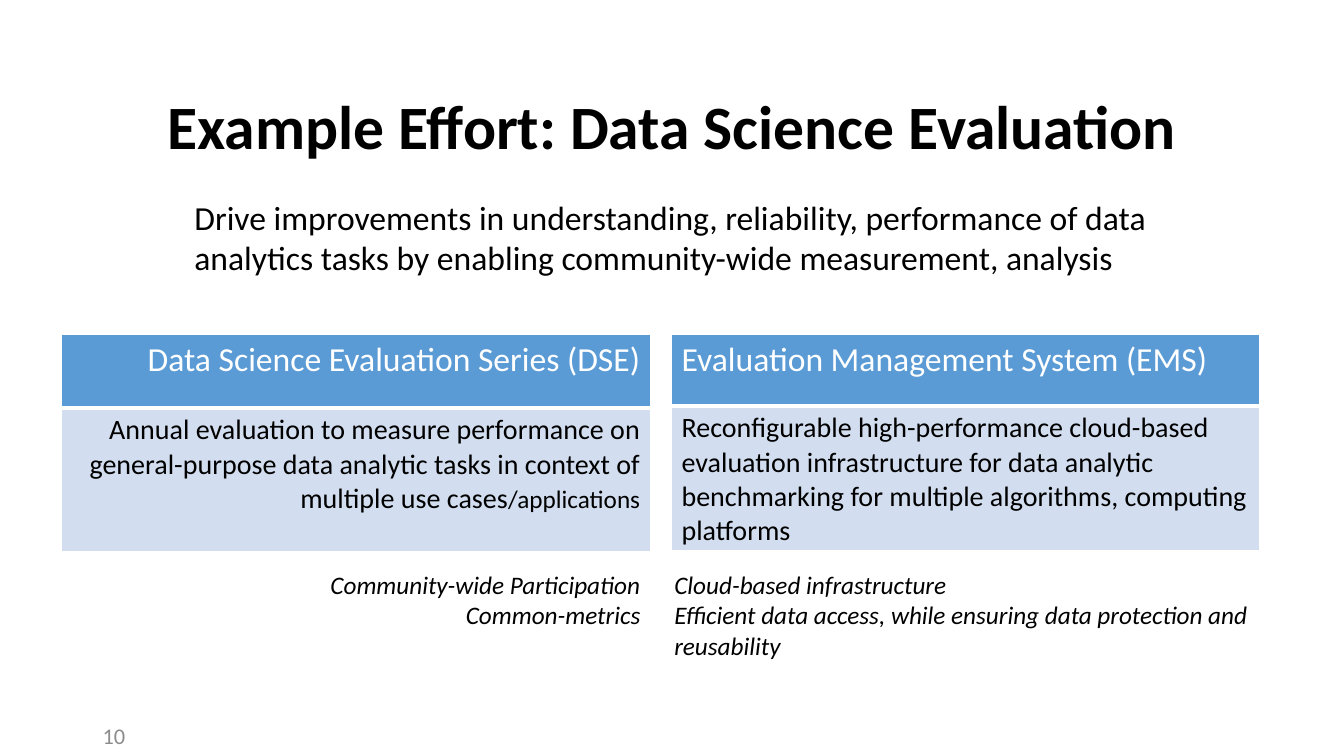
from lxml import etree
from pptx import Presentation
from pptx.dml.color import RGBColor
from pptx.enum.text import MSO_ANCHOR, PP_ALIGN
from pptx.oxml.ns import qn
from pptx.util import Inches, Pt

FONT = "Calibri"
COLORS = {
    "text": "000000",
    "number": "8C8C8C",
    "white": "FFFFFF",
    "header": "5B9BD5",
    "body": "D2DEEF",
}


def write_paragraphs(frame, paragraphs, color="text", align=PP_ALIGN.LEFT,
                     bold=False, italic=False, line_spacing=None):
    """Fill a frame; each paragraph is a list of (text, size) runs."""
    frame.word_wrap = True
    for index, runs in enumerate(paragraphs):
        paragraph = frame.add_paragraph() if index else frame.paragraphs[0]
        paragraph.alignment = align
        if line_spacing:
            paragraph.line_spacing = line_spacing
        for text, size in runs:
            run = paragraph.add_run()
            run.text = text
            run.font.name = FONT
            run.font.size = Pt(size)
            run.font.bold = bold
            run.font.italic = italic
            run.font.color.rgb = RGBColor.from_string(COLORS[color])


def add_text(slide, box, paragraphs, anchor=MSO_ANCHOR.TOP, **style):
    text_box = slide.shapes.add_textbox(*map(Inches, box))
    text_box.text_frame.vertical_anchor = anchor
    write_paragraphs(text_box.text_frame, paragraphs, **style)


def style_cell(cell, fill, bottom_width):
    """Set the cell fill and its white borders."""
    properties = cell._tc.get_or_add_tcPr()
    for side, width in (("L", 1), ("R", 1), ("T", 1), ("B", bottom_width)):
        line = etree.SubElement(properties, qn(f"a:ln{side}"), w=str(Pt(width)))
        solid = etree.SubElement(line, qn("a:solidFill"))
        etree.SubElement(solid, qn("a:srgbClr"), val=COLORS["white"])
    cell.fill.solid()
    cell.fill.fore_color.rgb = RGBColor.from_string(COLORS[fill])


def add_card(slide, box, row_heights, heading, description, align):
    """Place a one-column table with a heading above a description."""
    left, top, width = box
    table = slide.shapes.add_table(
        2, 1, Inches(left), Inches(top), Inches(width), Inches(sum(row_heights))
    ).table
    for row, height in zip(table.rows, row_heights):
        row.height = Inches(height)
    header, body = table.cell(0, 0), table.cell(1, 0)
    style_cell(header, "header", 3)
    style_cell(body, "body", 1)
    write_paragraphs(header.text_frame, [[(heading, 24)]], "white", align)
    write_paragraphs(body.text_frame, [description], align=align)


def add_introduction(slide):
    add_text(slide, (0.92, 0.56, 11.5, 1.45),
             [[("Example Effort: Data Science Evaluation", 44)]],
             anchor=MSO_ANCHOR.MIDDLE, align=PP_ALIGN.CENTER,
             bold=True, line_spacing=0.9)
    add_text(slide, (1.83, 1.9, 9.66, 0.91),
             [[("Drive improvements in understanding, reliability, performance of data "
                "analytics tasks by enabling community-wide measurement, analysis", 24)]])


def add_series(slide, left, top):
    add_card(slide, (left, top, 5.84), (0.73, 1.42),
             "Data Science Evaluation Series (DSE)",
             [("Annual evaluation to measure performance on general-purpose data "
               "analytic tasks in context of multiple use cases", 20),
              ("/applications", 18)],
             PP_ALIGN.RIGHT)
    add_text(slide, (left + 1.42, top + 2.28, 4.42, 0.71),
             [[("Community-wide Participation", 18)], [("Common-metrics", 18)]],
             align=PP_ALIGN.RIGHT, italic=True)


def add_management_system(slide, left, top):
    add_card(slide, (left, top, 5.83), (0.71, 1.35),
             "Evaluation Management System (EMS)",
             [("Reconfigurable high-performance cloud-based evaluation infrastructure "
               "for data analytic benchmarking for multiple algorithms, computing "
               "platforms", 20)],
             PP_ALIGN.LEFT)
    add_text(slide, (left - 0.07, top + 2.28, 5.9, 1.01),
             [[("Cloud-based infrastructure", 18)],
              [("Efficient data access, while ensuring data protection and "
                "reusability", 18)]],
             italic=True)


def add_slide_number(slide):
    add_text(slide, (0.92, 7.1, 3, 0.4), [[("10", 16)]],
             anchor=MSO_ANCHOR.MIDDLE, color="number")


def main():
    presentation = Presentation()
    presentation.slide_width = Inches(13.33)
    presentation.slide_height = Inches(7.5)
    slide = presentation.slides.add_slide(presentation.slide_layouts[6])
    add_introduction(slide)
    add_series(slide, 0.61, 3.32)
    add_management_system(slide, 6.66, 3.32)
    add_slide_number(slide)
    presentation.save("out.pptx")


if __name__ == "__main__":
    main()
